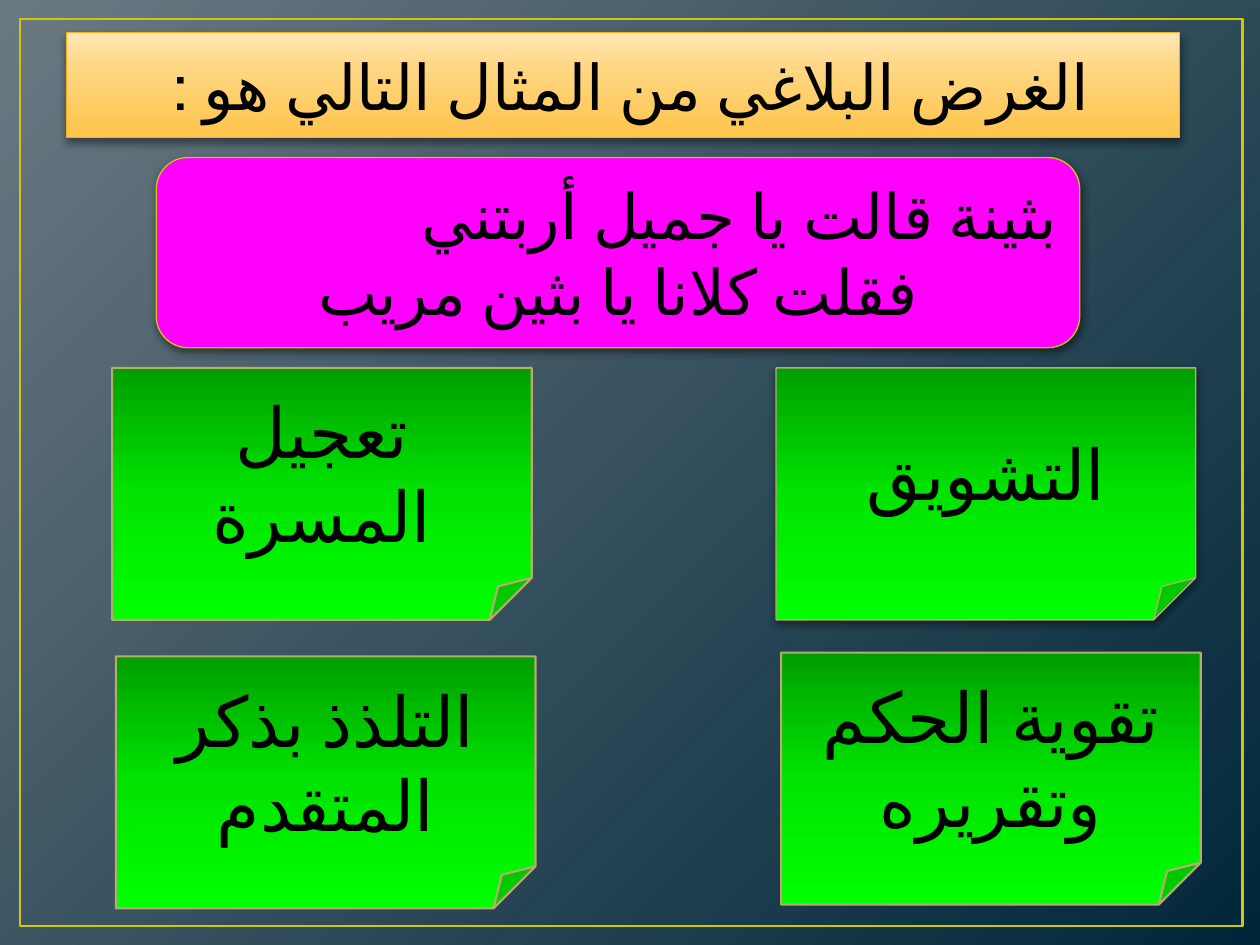
import pptx
import pptx.util
import pptx.dml.color
import pptx.enum.shapes
import pptx.enum.text
import pptx.oxml
import pptx.oxml.ns

Inches, Pt = pptx.util.Inches, pptx.util.Pt
RGB = pptx.dml.color.RGBColor
KIND = pptx.enum.shapes.MSO_SHAPE
ALIGN = pptx.enum.text.PP_ALIGN
qn = pptx.oxml.ns.qn
NS = pptx.oxml.ns.nsdecls("a")

FONT = "TeX Gyre Schola"
BLACK = RGB(0, 0, 0)
GOLD = RGB(0xCF, 0xC6, 0x0D)
AMBER = RGB(0xFF, 0xAD, 0x1C)
PINK = RGB(0xFF, 0, 0xFF)
TAN = RGB(0xB9, 0xAB, 0x6F)
SLATE = [(0, RGB(0x6B, 0x79, 0x82)), (100, RGB(0, 0x27, 0x39))]
HONEY = [(0, RGB(0xFF, 0xC4, 0x4B)), (65, RGB(0xFF, 0xD6, 0x81)),
         (100, RGB(0xFF, 0xE7, 0xB6))]
GREEN = [(0, RGB(0, 0x9E, 0)), (50, RGB(0, 0xE4, 0)), (100, RGB(0, 0xFF, 0))]

# Answer cards: left, top, lines, outline width, shadow
CARDS = [
    (6.16, 2.92, ["التشويق"], 0.75, True),
    (0.89, 2.92, ["تعجيل المسرة"], 1.25, False),
    (6.2, 5.18, ["تقوية الحكم", "وتقريره"], 1.25, False),
    (0.92, 5.21, ["التلذذ بذكر", "المتقدم"], 1.25, False),
]


def place(shape, left, top, width, height):
    spots = {"left": left, "top": top, "width": width, "height": height}
    for name, value in spots.items():
        setattr(shape, name, Inches(value))


def blend(fill, root, stops, angle=None):
    """Gradient fill: linear at an angle, or circular from the top left."""
    fill.gradient()
    old = root.find(".//" + qn("a:gradFill"))
    marks = "".join(
        f'<a:gs pos="{pos * 1000}"><a:srgbClr val="{color}"/></a:gs>'
        for pos, color in stops)
    if angle is None:
        way = ('<a:path path="circle">'
               '<a:fillToRect r="100000" b="100000"/></a:path>')
    else:
        way = f'<a:lin ang="{angle * 60000}" scaled="0"/>'
    new = pptx.oxml.parse_xml(
        f'<a:gradFill {NS} rotWithShape="1"><a:gsLst>{marks}</a:gsLst>{way}</a:gradFill>')
    old.getparent().replace(old, new)


def edge(shape, color, width, shade=False):
    """Outline, with an optional soft shadow below."""
    shape.line.color.rgb = color
    shape.line.width = Pt(width)
    shape.shadow.inherit = False
    if shade:
        drop = pptx.oxml.parse_xml(
            f'<a:outerShdw {NS} blurRad="{Pt(5)}" dist="{Pt(2)}" dir="5400000" '
            'rotWithShape="0"><a:srgbClr val="000000"><a:alpha val="43000"/>'
            '</a:srgbClr></a:outerShdw>')
        shape.element.spPr.find(qn("a:effectLst")).append(drop)


def write(shape, lines, size, aligns=None):
    """Right-to-left text, one paragraph a line."""
    frame = shape.text_frame
    look = {"word_wrap": True,
            "auto_size": pptx.enum.text.MSO_AUTO_SIZE.NONE,
            "vertical_anchor": pptx.enum.text.MSO_ANCHOR.MIDDLE}
    for name, value in look.items():
        setattr(frame, name, value)
    frame.text = "\n".join(lines)
    aligns = aligns or [ALIGN.CENTER] * len(lines)
    for para, align in zip(frame.paragraphs, aligns):
        para.alignment = align
        para._p.get_or_add_pPr().set("rtl", "1")
        for run in para.runs:
            for name, value in {"name": FONT, "size": Pt(size)}.items():
                setattr(run.font, name, value)
            run.font.color.rgb = BLACK
            run._r.get_or_add_rPr().set("lang", "ar-SA")


def add(slide, kind, *box):
    return slide.shapes.add_shape(kind, *map(Inches, box))


def banner(slide):
    title = slide.shapes.title
    place(title, 0.53, 0.26, 8.83, 0.83)
    title.element.spPr.find(qn("a:xfrm")).addnext(pptx.oxml.parse_xml(
        f'<a:prstGeom {NS} prst="round2SameRect"><a:avLst>'
        '<a:gd name="adj1" fmla="val 16667"/><a:gd name="adj2" fmla="val 0"/>'
        '</a:avLst></a:prstGeom>'))
    blend(title.fill, title.element, HONEY, 270)
    edge(title, AMBER, 0.75, True)
    write(title, ["الغرض البلاغي من المثال التالي هو : "], 36)


def verse(slide):
    shape = add(slide, KIND.ROUNDED_RECTANGLE, 1.24, 1.25, 7.33, 1.51)
    shape.fill.solid()
    shape.fill.fore_color.rgb = PINK
    edge(shape, GOLD, 0.75, True)
    write(shape, ["بثينة قالت يا جميل أربتني", "فقلت كلانا يا بثين مريب"],
          36, [ALIGN.RIGHT, ALIGN.CENTER])


def card(slide, left, top, lines, width, shade):
    shape = add(slide, KIND.FOLDED_CORNER, left, top, 3.33, 2)
    blend(shape.fill, shape.element, GREEN, 90)
    edge(shape, TAN, width, shade)
    write(shape, lines, 40)


def main():
    deck = pptx.Presentation()
    deck.slide_width, deck.slide_height = Inches(10), Inches(7.5)
    slide = deck.slides.add_slide(deck.slide_layouts[5])

    # Backdrop and border
    blend(slide.background.fill, slide.element, SLATE)
    border = add(slide, KIND.RECTANGLE, 0.16, 0.15, 9.7, 7.2)
    border.fill.background()
    edge(border, GOLD, 1.5)

    # Question, verse and answers
    banner(slide)
    verse(slide)
    for item in CARDS:
        card(slide, *item)
    deck.save("out.pptx")


if __name__ == "__main__":
    main()
